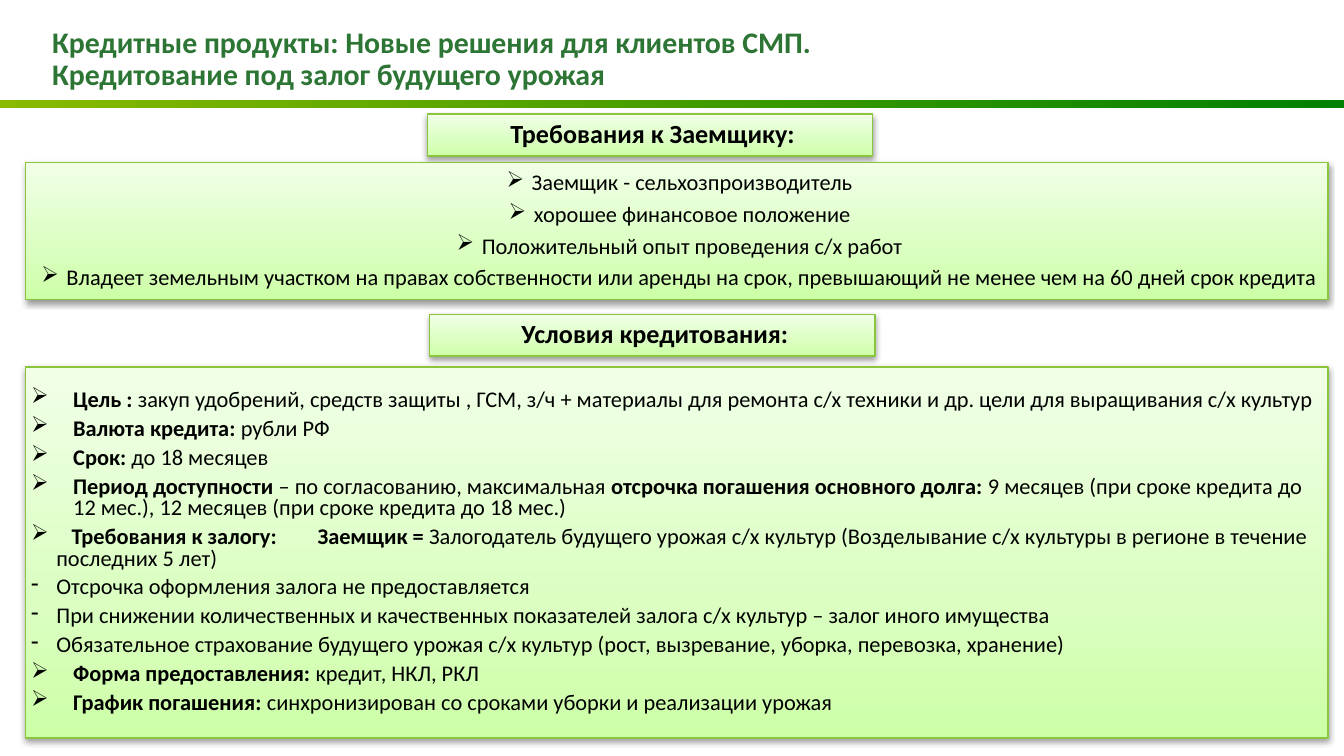
from copy import deepcopy
from dataclasses import dataclass

from lxml.etree import SubElement as Sub
from pptx import Presentation
from pptx.dml.color import RGBColor as RGB
from pptx.enum.shapes import MSO_SHAPE as Kind
from pptx.enum.text import MSO_ANCHOR as Anchor, PP_ALIGN as Align
from pptx.oxml.ns import qn
from pptx.util import Pt


@dataclass(frozen=True)
class Theme:
    font: str = "Calibri"
    title: str = "2D7534"
    ink: str = "000000"
    edge: str = "89C63D"
    bar: tuple = ((0, "89BA00"), (1, "008000"))
    panel: tuple = ((0, "CCFFA6"), (0.35, "DAFFC0"), (1, "F1FFE7"))
    big: int = 16
    head: int = 14
    body: int = 12


T = Theme()
ARROW, DASH = "➢", "-"
WIDE, SLIM = 22.5, 13.5

TITLE = [
    "Кредитные продукты: Новые решения для клиентов СМП.",
    "Кредитование под залог будущего урожая",
]
NEEDS = [
    "Заемщик - сельхозпроизводитель",
    "хорошее финансовое положение",
    "Положительный опыт проведения с/х работ",
    "Владеет земельным участком на правах собственности или аренды на срок, "
    "превышающий не менее чем на 60 дней срок кредита",
]
TERMS = [
    (ARROW, WIDE, [
        ("Цель : ", True),
        ("закуп удобрений, средств защиты , ГСМ, з/ч + материалы для ремонта "
         "с/х техники и др. цели для выращивания с/х культур", False)]),
    (ARROW, WIDE, [("Валюта кредита: ", True), ("рубли РФ", False)]),
    (ARROW, WIDE, [("Срок: ", True), ("до 18 месяцев", False)]),
    (ARROW, WIDE, [
        ("Период доступности ", True),
        ("– по согласованию, максимальная ", False),
        ("отсрочка погашения основного долга: ", True),
        ("9 месяцев (при сроке кредита до 12 мес.), "
         "12 месяцев (при сроке кредита до 18 мес.)", False)]),
    (ARROW, SLIM, [
        (" ", True, 5.4),
        ("Требования к залогу:", True),
        (" ", True, 19),
        ("Заемщик = ", True),
        ("Залогодатель будущего урожая с/х культур (Возделывание с/х культуры "
         "в регионе в течение последних 5 лет)", False)]),
    (DASH, SLIM, [("Отсрочка оформления залога не предоставляется", False)]),
    (DASH, SLIM, [
        ("При снижении количественных и качественных показателей залога "
         "с/х культур – залог иного имущества", False)]),
    (DASH, SLIM, [
        ("Обязательное страхование будущего урожая с/х культур "
         "(рост, вызревание, уборка, перевозка, хранение)", False)]),
    (ARROW, WIDE, [("Форма предоставления: ", True), ("кредит, НКЛ, РКЛ", False)]),
    (ARROW, WIDE, [
        ("График погашения: ", True),
        ("синхронизирован со сроками уборки и реализации урожая", False)]),
]


def put(obj, vals):
    for name, val in vals.items():
        setattr(obj, name, val)


def blend(shape, stops, angle):
    fill = shape.fill
    fill.gradient()
    fill.gradient_angle = angle
    group = shape._element.spPr.find(qn("a:gradFill")).find(qn("a:gsLst"))
    while len(group) < len(stops):
        group.append(deepcopy(group[0]))
    for stop, (pos, tone) in zip(fill.gradient_stops, stops):
        stop.color.rgb = RGB.from_string(tone)
        stop.position = pos


def shade(shape):
    shape.shadow.inherit = False
    group = shape._element.spPr.find(qn("a:effectLst"))
    cast = Sub(group, qn("a:outerShdw"), blurRad=str(Pt(3.1)),
               dist=str(Pt(1.6)), dir="5400000", rotWithShape="0")
    tone = Sub(cast, qn("a:srgbClr"), val=T.ink)
    Sub(tone, qn("a:alpha"), val="38000")


def write(para, runs, size, tone, form, mark=None, hang=0):
    if mark:
        props = para._p.get_or_add_pPr()
        props.set("marL", str(Pt(hang)))
        props.set("indent", str(-Pt(hang)))
        Sub(props, qn("a:buChar"), char=mark)
    put(para, form)
    for text, bold, *gap in runs:
        run = para.add_run()
        run.text = text
        put(run.font, {"name": T.font, "size": Pt(size), "bold": bold})
        run.font.color.rgb = RGB.from_string(tone)
        if gap:
            run._r.get_or_add_rPr().set("spc", str(int(gap[0] * 100)))


def fill_text(frame, rows, size, tone, form, inset):
    left, top, right, base = map(Pt, inset)
    put(frame, {"word_wrap": True, "vertical_anchor": Anchor.MIDDLE,
                "margin_left": left, "margin_top": top,
                "margin_right": right, "margin_bottom": base})
    for num, (mark, hang, runs) in enumerate(rows):
        para = frame.add_paragraph() if num else frame.paragraphs[0]
        write(para, runs, size, tone, form, mark, hang)


def panel(slide, box, rows, size, form):
    shape = slide.shapes.add_shape(Kind.PENTAGON, *map(Pt, box))
    shape.adjustments[0] = 0
    blend(shape, T.panel, 90)
    shape.line.color.rgb = RGB.from_string(T.edge)
    shape.line.width = Pt(0.75)
    shade(shape)
    fill_text(shape.text_frame, rows, size, T.ink, form, (2.9, 0.7, 0, 0.7))


def header(slide, box):
    left, top, wide, high = box
    bar = slide.shapes.add_shape(
        Kind.RECTANGLE, Pt(left), Pt(top + high - 4.3), Pt(wide), Pt(4.3))
    blend(bar, T.bar, 0)
    bar.line.fill.background()
    bar.shadow.inherit = False
    text = slide.shapes.add_textbox(Pt(left + 28), Pt(top + 15.1), Pt(501), Pt(33.8))
    rows = [(None, 0, [(line, True)]) for line in TITLE]
    form = {"alignment": Align.JUSTIFY, "line_spacing": 0.9}
    fill_text(text.text_frame, rows, T.big, T.title, form, (0, 0, 0, 0))


def label(slide, box, text):
    form = {"alignment": Align.CENTER, "line_spacing": 0.9}
    panel(slide, box, [(None, 0, [(text, True)])], T.head, form)


def needs(slide, box):
    rows = [(ARROW, SLIM, [(line, False)]) for line in NEEDS]
    form = {"alignment": Align.CENTER, "line_spacing": 0.9, "space_after": Pt(4)}
    panel(slide, box, rows, T.body, form)


def terms(slide, box):
    form = {"alignment": Align.LEFT, "line_spacing": 0.8, "space_after": Pt(4)}
    panel(slide, box, TERMS, T.body, form)


def main():
    deck = Presentation()
    put(deck, {"slide_width": Pt(720), "slide_height": Pt(405)})
    slide = deck.slides.add_slide(deck.slide_layouts[6])
    header(slide, (0, 0, 720, 57.8))
    label(slide, (229, 61.2, 238.5, 22.4), "Требования к Заемщику:")
    needs(slide, (13.8, 87, 697.7, 73.6))
    label(slide, (230.2, 168.4, 238.5, 22.4), "Условия кредитования:")
    terms(slide, (13.8, 196.7, 697.7, 198.7))
    deck.save("out.pptx")


if __name__ == "__main__":
    main()
